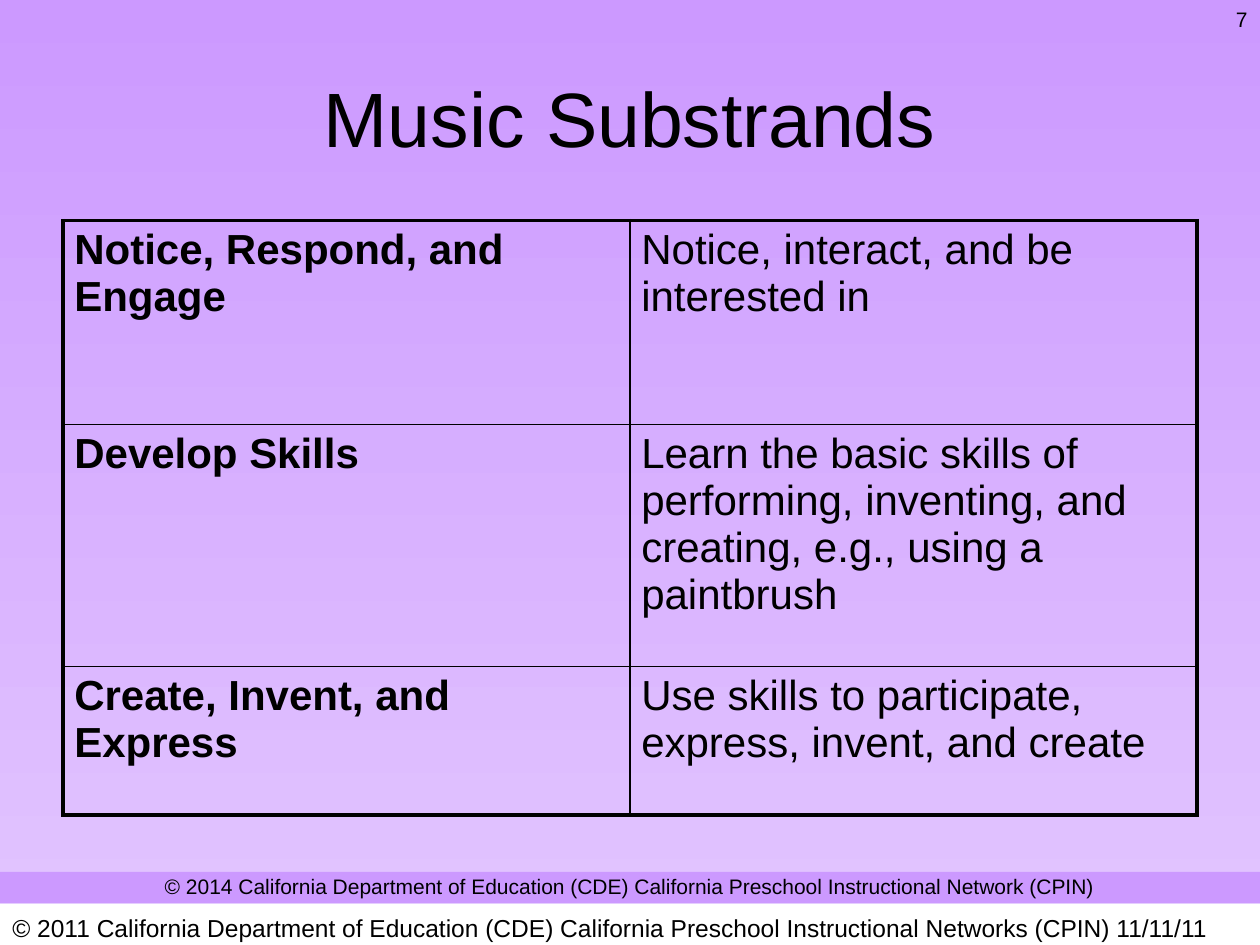
from pptx import Presentation
from pptx.dml.color import RGBColor
from pptx.enum.shapes import MSO_SHAPE
from pptx.enum.text import MSO_ANCHOR, PP_ALIGN
from pptx.oxml import parse_xml
from pptx.oxml.ns import nsdecls
from pptx.util import Inches, Pt

COLORS = {"ink": "000000", "band": "CC99FF", "fade": "E2C5FF", "paper": "FFFFFF"}
COLUMNS, ROWS = 100, 75
THICK, THIN = 2.25, 1

SUBSTRANDS = [
    ("Notice, Respond, and Engage", "Notice, interact, and be interested in"),
    ("Develop Skills",
     "Learn the basic skills of performing, inventing, and creating, e.g., using a paintbrush"),
    ("Create, Invent, and Express", "Use skills to participate, express, invent, and create"),
]


def color(name):
    return RGBColor.from_string(COLORS[name])


class SlideBuilder:
    def __init__(self, deck):
        self.font = "Arial"
        self.column = deck.slide_width / COLUMNS
        self.row = deck.slide_height / ROWS
        self.slide = deck.slides.add_slide(deck.slide_layouts[6])

    def place(self, left, top, width, height):
        return [int(left * self.column), int(top * self.row),
                int(width * self.column), int(height * self.row)]

    def background(self, start, end):
        fill = self.slide.background.fill
        fill.gradient()
        fill.gradient_angle = 270
        for stop, name in zip(fill.gradient_stops, (start, end)):
            stop.color.rgb = color(name)

    def band(self, area, name):
        shape = self.slide.shapes.add_shape(MSO_SHAPE.RECTANGLE, *self.place(*area))
        shape.shadow.inherit = False
        shape.fill.solid()
        shape.fill.fore_color.rgb = color(name)
        shape.line.fill.background()

    def add_span(self, para, text, size, align=PP_ALIGN.LEFT, bold=False):
        span = para.add_run()
        span.text = text
        para.alignment = align
        for key, value in {"name": self.font, "size": Pt(size), "bold": bold}.items():
            setattr(span.font, key, value)
        span.font.color.rgb = color("ink")

    def text(self, area, text, size, align=PP_ALIGN.LEFT, anchor=MSO_ANCHOR.TOP):
        box = self.slide.shapes.add_textbox(*self.place(*area))
        frame = box.text_frame
        for key, value in {"word_wrap": True, "vertical_anchor": anchor}.items():
            setattr(frame, key, value)
        self.add_span(frame.paragraphs[0], text, size, align)

    def border(self, cell, widths):
        properties = cell._tc.get_or_add_tcPr()
        for index, (side, width) in enumerate(widths.items()):
            properties.insert(index, parse_xml(
                f'<a:ln{side} {nsdecls("a")} w="{int(Pt(width))}"><a:solidFill>'
                f'<a:srgbClr val="{COLORS["ink"]}"/></a:solidFill></a:ln{side}>'))

    def table(self, area, content, heights, size):
        last_row, last_column = len(content) - 1, len(content[0]) - 1
        table = self.slide.shapes.add_table(
            len(content), len(content[0]), *self.place(*area)).table
        for key in ("first_row", "horz_banding"):
            setattr(table, key, False)
        for r, (texts, height) in enumerate(zip(content, heights)):
            table.rows[r].height = int(height * self.row)
            for c, text in enumerate(texts):
                cell = table.cell(r, c)
                cell.fill.background()
                for side in ("left", "right"):
                    setattr(cell, f"margin_{side}", Inches(0.09))
                self.add_span(cell.text_frame.paragraphs[0], text, size, bold=c == 0)
                edges = {"L": c == 0, "R": c == last_column, "T": r == 0, "B": r == last_row}
                self.border(cell, {side: THICK if outer else THIN
                                   for side, outer in edges.items()})


def main():
    deck = Presentation()
    deck.slide_width, deck.slide_height = Inches(10), Inches(7.5)
    page = SlideBuilder(deck)
    page.background("band", "fade")
    page.band((0, 71.7, COLUMNS, 3.3), "paper")
    page.band((0, 69.2, COLUMNS, 2.5), "band")
    page.text((0, 68.8, COLUMNS, 3),
              "© 2014 California Department of Education (CDE) "
              "California Preschool Instructional Network (CPIN)", 12, PP_ALIGN.CENTER)
    page.text((5, 3, 90, 12.5), "Music Substrands", 44, PP_ALIGN.CENTER, MSO_ANCHOR.MIDDLE)
    page.table((5, 17.5, 90, 47.2), SUBSTRANDS, (16.2, 19.2, 11.8), 24)
    page.text((0, 72, COLUMNS, 3.3),
              "© 2011 California Department of Education (CDE) "
              "California Preschool Instructional Networks (CPIN) 11/11/11", 14)
    page.text((92.5, 0, 7.5, 5.2), "7", 12, PP_ALIGN.RIGHT)
    deck.save("out.pptx")


if __name__ == "__main__":
    main()
